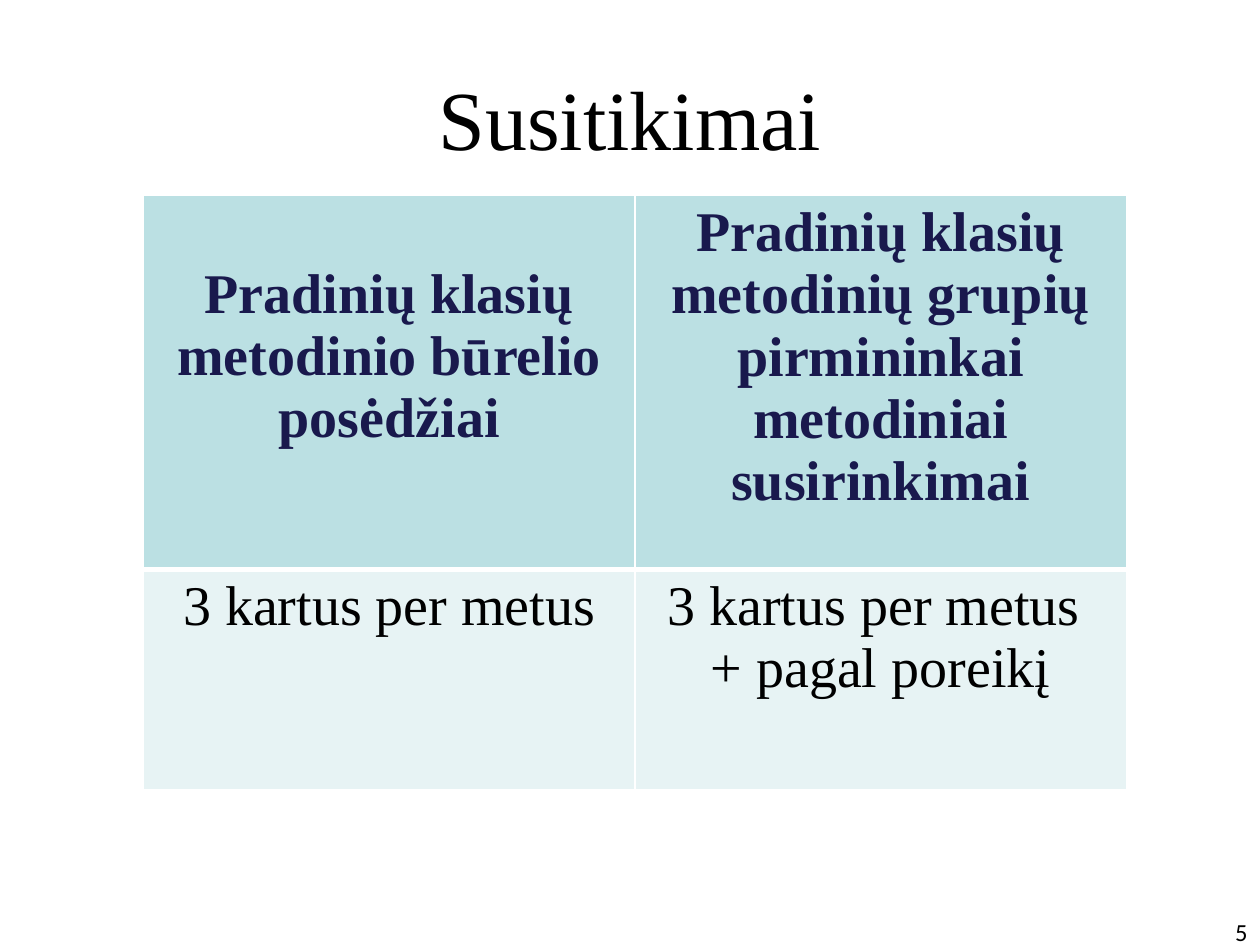
from dataclasses import dataclass

import lxml.etree
import pptx
import pptx.dml.color
import pptx.enum.text
import pptx.oxml.ns
import pptx.util
from pptx.util import Inches

ALIGN = pptx.enum.text.PP_ALIGN
ANCHOR = pptx.enum.text.MSO_ANCHOR


@dataclass(frozen=True)
class Theme:
    serif: str = "Times New Roman"
    sans: str = "Calibri"
    black: str = "000000"
    navy: str = "19194D"
    header_fill: str = "BBE0E3"
    body_fill: str = "E7F3F4"
    border: str = "FFFFFF"
    title_size: int = 48
    table_size: int = 32
    number_size: int = 14


@dataclass(frozen=True)
class CellText:
    lines: tuple[str, ...]
    top_margin: float = 0.05


@dataclass(frozen=True)
class TableRow:
    height: float
    fill: str
    color: str
    bold: bool
    top_border: float
    bottom_border: float
    cells: tuple[CellText, ...]


THEME = Theme()
COLUMN_WIDTH = 3.9
ROWS = (
    TableRow(2.97, THEME.header_fill, THEME.navy, True, 1, 3, (
        CellText(("Pradinių klasių metodinio būrelio posėdžiai",), 0.54),
        CellText(("Pradinių klasių metodinių grupių pirmininkai metodiniai susirinkimai",)),
    )),
    TableRow(1.75, THEME.body_fill, THEME.black, False, 3, 1, (
        CellText(("3 kartus per metus",)),
        CellText(("3 kartus per metus ", "+ pagal poreikį")),
    )),
)


def add_span(para, text: str, font: str, size: int, color: str,
             align, bold: bool = False) -> None:
    para.alignment = align
    span = para.add_run()
    span.text = text
    span.font.name = font
    span.font.size = pptx.util.Pt(size)
    span.font.bold = bold
    span.font.color.rgb = pptx.dml.color.RGBColor.from_string(color)


def set_borders(cell, top: float, bottom: float) -> None:
    qn = pptx.oxml.ns.qn
    properties = cell._tc.get_or_add_tcPr()
    widths = {"a:lnL": 1, "a:lnR": 1, "a:lnT": top, "a:lnB": bottom}
    for position, (tag, width) in enumerate(widths.items()):
        line = lxml.etree.Element(qn(tag), w=str(pptx.util.Pt(width)))
        fill = lxml.etree.SubElement(line, qn("a:solidFill"))
        lxml.etree.SubElement(fill, qn("a:srgbClr"), val=THEME.border)
        properties.insert(position, line)


def fill_cell(cell, content: CellText, row: TableRow) -> None:
    cell.fill.solid()
    cell.fill.fore_color.rgb = pptx.dml.color.RGBColor.from_string(row.fill)
    cell.margin_top = Inches(content.top_margin)
    frame = cell.text_frame
    for index, line in enumerate(content.lines):
        para = frame.add_paragraph() if index else frame.paragraphs[0]
        add_span(para, line, THEME.serif, THEME.table_size, row.color,
                 ALIGN.CENTER, row.bold)
    set_borders(cell, row.top_border, row.bottom_border)


def add_meeting_table(page) -> None:
    columns = len(ROWS[0].cells)
    table = page.shapes.add_table(
        len(ROWS), columns, Inches(1.14), Inches(1.55),
        Inches(COLUMN_WIDTH * columns), Inches(sum(row.height for row in ROWS)),
    ).table
    for column in table.columns:
        column.width = Inches(COLUMN_WIDTH)
    for row_index, row in enumerate(ROWS):
        table.rows[row_index].height = Inches(row.height)
        for column_index, content in enumerate(row.cells):
            fill_cell(table.cell(row_index, column_index), content, row)


def main() -> None:
    deck = pptx.Presentation()
    deck.slide_width, deck.slide_height = Inches(10), Inches(7.5)
    page = deck.slides.add_slide(deck.slide_layouts[5])

    # Title
    title = page.shapes.title
    title.left, title.top = Inches(0.5), Inches(0.3)
    title.width, title.height = Inches(9), Inches(1.25)
    title.text_frame.vertical_anchor = ANCHOR.MIDDLE
    add_span(title.text_frame.paragraphs[0], "Susitikimai", THEME.serif,
             THEME.title_size, THEME.black, ALIGN.CENTER)

    # Meeting schedule
    add_meeting_table(page)

    # Page number
    box = page.shapes.add_textbox(Inches(7.67), Inches(7.23), Inches(2.33), Inches(0.27))
    box.text_frame.word_wrap = True
    add_span(box.text_frame.paragraphs[0], "5", THEME.sans,
             THEME.number_size, THEME.black, ALIGN.RIGHT)

    deck.save("out.pptx")


if __name__ == "__main__":
    main()
